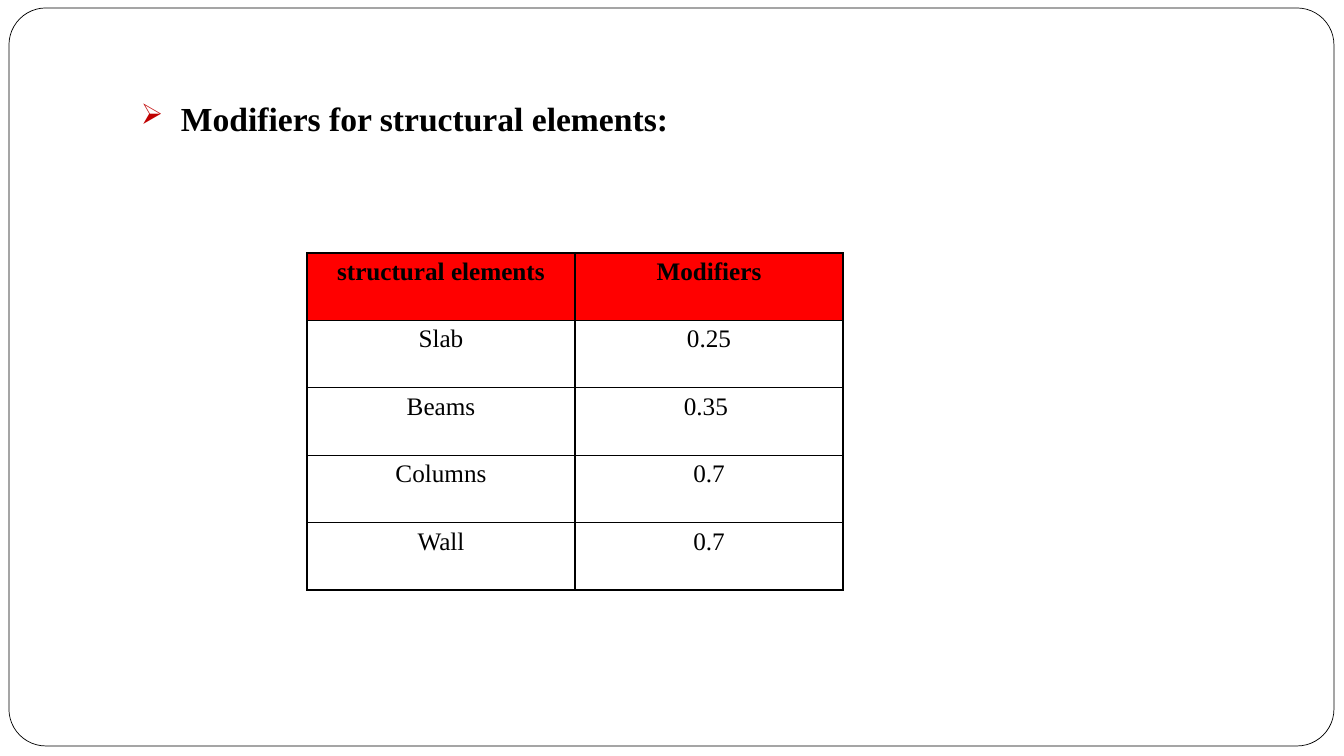
from lxml import etree
from pptx import Presentation
from pptx.dml.color import RGBColor
from pptx.enum.shapes import MSO_SHAPE
from pptx.enum.text import MSO_AUTO_SIZE, PP_ALIGN
from pptx.oxml.ns import qn
from pptx.util import Emu, Pt

ROUNDED = MSO_SHAPE.ROUNDED_RECTANGLE
CENTER = PP_ALIGN.CENTER
GROW = MSO_AUTO_SIZE.SHAPE_TO_FIT_TEXT

EMU_PER_PX = 914400 / 100.8
FONT = "Times New Roman"
COLORS = {
    "paper": "FFFFFF",
    "ink": "000000",
    "header": "FF0000",
    "bullet": "C00000",
}
MODIFIERS = [
    ("structural elements", "Modifiers"),
    ("Slab", "0.25"),
    ("Beams", "0.35 "),
    ("Columns", "0.7"),
    ("Wall", "0.7"),
]


def px(length):
    return Emu(round(length * EMU_PER_PX))


def rgb(name):
    return RGBColor.from_string(COLORS[name])


def add_xml(parent, tag, **attributes):
    return etree.SubElement(parent, qn(tag), attributes)


def add_solid_color(parent, name):
    add_xml(parent, "a:srgbClr", val=COLORS[name])


def style_runs(para, size, bold):
    for span in para.runs:
        span.font.name = FONT
        span.font.size = Pt(size)
        span.font.bold = bold
        span.font.color.rgb = rgb("ink")


def add_frame(page, left, top, width, height):
    frame = page.shapes.add_shape(ROUNDED, px(left), px(top), px(width), px(height))
    frame.adjustments[0] = 0.05
    frame.shadow.inherit = False
    frame.fill.solid()
    frame.fill.fore_color.rgb = rgb("paper")
    frame.line.color.rgb = rgb("ink")
    frame.line.width = Pt(0.5)


def add_bullet(para, symbol, indent):
    properties = para._p.get_or_add_pPr()
    properties.set("marL", str(px(indent)))
    properties.set("indent", str(-px(indent)))
    add_solid_color(add_xml(properties, "a:buClr"), "bullet")
    add_xml(properties, "a:buSzPct", val="85000")
    add_xml(properties, "a:buChar", char=symbol)


def add_heading(page, text, left, top, width, height):
    box = page.shapes.add_textbox(px(left), px(top), px(width), px(height))
    box.text_frame.word_wrap = True
    box.text_frame.auto_size = GROW
    box.text_frame.text = text
    para = box.text_frame.paragraphs[0]
    para.space_before = Pt(7.7)
    add_bullet(para, "➢", 40)
    style_runs(para, 24, True)


def add_borders(cell):
    properties = cell._tc.get_or_add_tcPr()
    for side in ("a:lnL", "a:lnR", "a:lnT", "a:lnB"):
        border = add_xml(properties, side, w=str(Pt(1)))
        add_solid_color(add_xml(border, "a:solidFill"), "ink")


def add_grid(page, rows, left, top, width, height):
    """Add a bordered table whose first row is the header."""
    table = page.shapes.add_table(
        len(rows), len(rows[0]), px(left), px(top), px(width), px(height)
    ).table
    for row_index, values in enumerate(rows):
        is_header = row_index == 0
        for column_index, value in enumerate(values):
            cell = table.cell(row_index, column_index)
            add_borders(cell)
            cell.fill.solid()
            cell.fill.fore_color.rgb = rgb("header" if is_header else "paper")
            cell.text_frame.text = value
            para = cell.text_frame.paragraphs[0]
            para.alignment = CENTER
            style_runs(para, 18, is_header)


def main():
    deck = Presentation()
    deck.slide_width = px(1344)
    deck.slide_height = px(756)
    page = deck.slides.add_slide(deck.slide_layouts[6])
    add_frame(page, 9, 8, 1325, 738)
    add_heading(page, "Modifiers for structural elements:", 131, 93, 548, 50)
    add_grid(page, MODIFIERS, 307, 253, 536, 337)
    deck.save("out.pptx")


if __name__ == "__main__":
    main()
